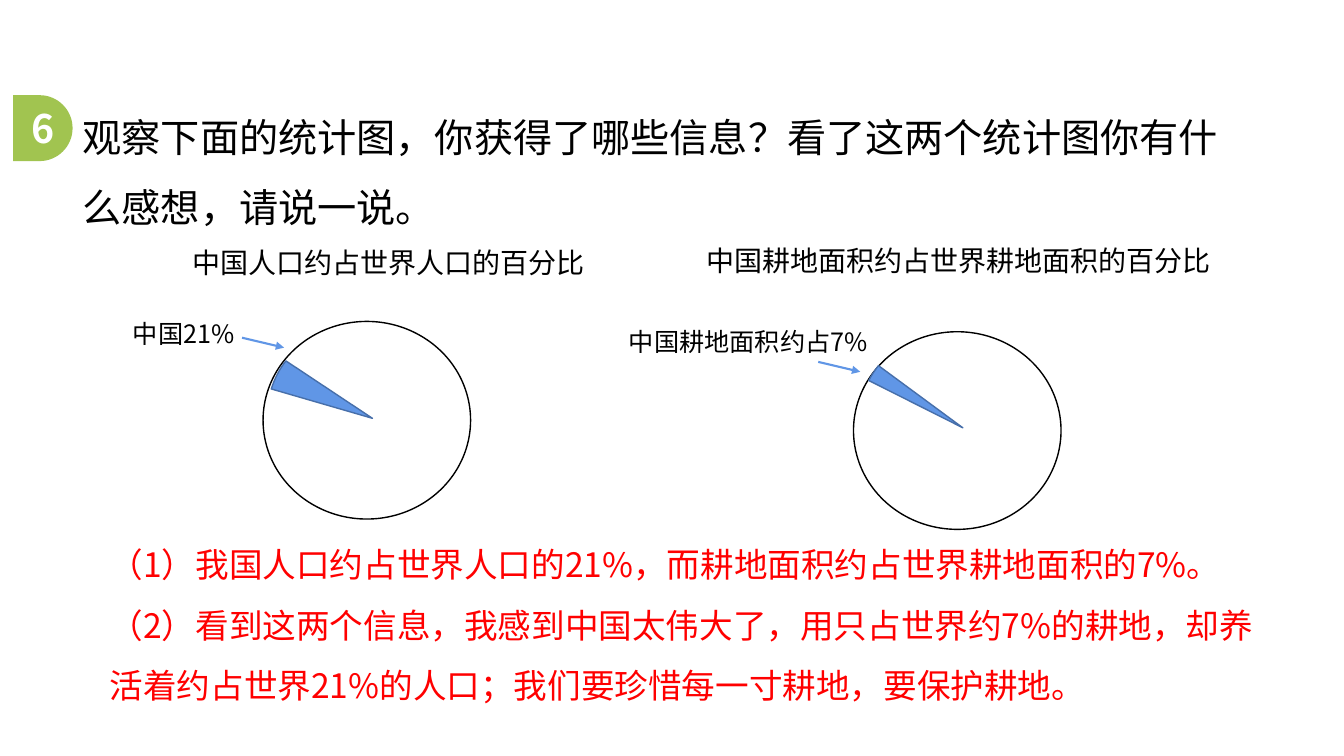
from math import cos, pi, sin

from lxml.etree import SubElement
from pptx import Presentation
from pptx.dml.color import RGBColor
from pptx.enum.shapes import MSO_CONNECTOR, MSO_SHAPE
from pptx.enum.text import MSO_ANCHOR, MSO_AUTO_SIZE, PP_ALIGN
from pptx.oxml.ns import qn
from pptx.util import Cm, Pt

FONT = "Noto Sans CJK SC"
BLACK = RGBColor(0x00, 0x00, 0x00)
WHITE = RGBColor(0xFF, 0xFF, 0xFF)
RED = RGBColor(0xFF, 0x00, 0x00)
GREEN = RGBColor(0xA1, 0xC4, 0x50)
BLUE = RGBColor(0x60, 0x96, 0xE6)
NAVY = RGBColor(0x47, 0x6F, 0xAA)


def place(shape, left, top, width, height):
    shape.left, shape.top = Cm(left), Cm(top)
    shape.width, shape.height = Cm(width), Cm(height)


def write(shape, text, size, color=BLACK, bold=False, wrap=True,
          align=PP_ALIGN.LEFT, anchor=MSO_ANCHOR.TOP, space=1.0):
    frame = shape.text_frame
    frame.text = text
    frame.word_wrap = wrap
    frame.auto_size = MSO_AUTO_SIZE.NONE
    frame.vertical_anchor = anchor
    for para in frame.paragraphs:
        para.alignment = align
        para.line_spacing = space
        para.space_before = Pt(0)
        for run in para.runs:
            font = run.font
            font.name, font.size, font.bold = FONT, Pt(size), bold
            font.color.rgb = color
            east = SubElement(font._element, qn("a:ea"))
            east.set("typeface", FONT)


def add_label(slide, text, size, box, wrap=True):
    label = slide.shapes.add_textbox(*map(Cm, box))
    write(label, text, size, wrap=wrap)


def paint(shape, fill, line=None):
    shape.shadow.inherit = False
    shape.fill.solid()
    shape.fill.fore_color.rgb = fill
    if line is None:
        shape.line.fill.background()
    else:
        shape.line.color.rgb = line
        shape.line.width = Pt(1)


def add_badge(slide, text, left, top, width, height):
    # Square on the left, half circle on the right
    half = height / 2
    mid = left + width - half
    turns = [pi * (step / 32 - 0.5) for step in range(33)]
    arc = [(Cm(mid + half * cos(turn)), Cm(top + half + half * sin(turn)))
           for turn in turns]
    path = slide.shapes.build_freeform(Cm(left), Cm(top))
    path.add_line_segments(arc + [(Cm(left), Cm(top + height))], close=True)
    badge = path.convert_to_shape()
    paint(badge, GREEN)
    write(badge, text, 28, WHITE, bold=True, align=PP_ALIGN.CENTER,
          anchor=MSO_ANCHOR.MIDDLE)


def add_pie(slide, left, top, drop, turn, start, end):
    disc = slide.shapes.add_shape(
        MSO_SHAPE.OVAL, Cm(left), Cm(top), Cm(5.23), Cm(4.98))
    paint(disc, WHITE, BLACK)
    slice_ = slide.shapes.add_shape(
        MSO_SHAPE.PIE, Cm(left + 0.1), Cm(top + drop), Cm(5.31), Cm(4.78))
    # Angles are stored in 60000ths of a degree, scaled by 100000
    slice_.adjustments[0] = start * 0.6
    slice_.adjustments[1] = end * 0.6
    slice_.rotation = turn
    paint(slice_, BLUE, NAVY)


def add_arrow(slide, left, top):
    arrow = slide.shapes.add_connector(
        MSO_CONNECTOR.STRAIGHT, Cm(left), Cm(top),
        Cm(left + 1.06), Cm(top + 0.25))
    arrow.line.color.rgb = BLUE
    arrow.line.width = Pt(1.5)
    SubElement(arrow.line._get_or_add_ln(), qn("a:tailEnd")).set(
        "type", "triangle")
    SubElement(arrow._element.spPr, qn("a:effectLst"))


def main():
    deck = Presentation()
    deck.slide_width, deck.slide_height = Cm(33.87), Cm(19.05)
    slide = deck.slides.add_slide(deck.slide_layouts[1])

    # Question
    add_badge(slide, "6", 0.33, 2.4, 1.5, 1.66)
    title = slide.shapes.title
    place(title, 1.83, 2.13, 29.36, 3.84)
    write(title, "观察下面的统计图，你获得了哪些信息？"
          "看了这两个统计图你有什么感想，请说一说。", 28, space=1.5)

    # Answers
    body = slide.placeholders[1]
    place(body, 2.51, 13.08, 29.85, 4.88)
    write(body, "（1）我国人口约占世界人口的21%，而耕地面积约占世界耕地面积的7%。"
          "（2）看到这两个信息，我感到中国太伟大了，用只占世界约7%的耕地，"
          "却养活着约占世界21%的人口；我们要珍惜每一寸耕地，要保护耕地。",
          24, RED, space=1.5)
    props = body.text_frame.paragraphs[0]._p.get_or_add_pPr()
    props.set("marL", "0")
    props.set("indent", "0")
    SubElement(props, qn("a:buNone"))

    # Population chart
    add_label(slide, "中国人口约占世界人口的百分比", 20,
              (4.6, 6.05, 10.49, 1.12), wrap=False)
    add_pie(slide, 6.63, 8.1, 0.05, 193.5, 2.717, 20.093)
    add_label(slide, "中国21%", 18, (3.1, 7.9, 4.27, 1.02))
    add_arrow(slide, 6.1, 8.51)

    # Farmland chart
    add_label(slide, "中国耕地面积约占世界耕地面积的百分比", 20,
              (17.55, 6.02, 13.34, 1.12), wrap=False)
    add_pie(slide, 21.51, 8.36, 0.03, 204, 2.717, 12.396)
    add_label(slide, "中国耕地面积约占7%", 18, (15.6, 8.1, 9.09, 1.02))
    add_arrow(slide, 20.62, 9.12)

    deck.save("out.pptx")


if __name__ == "__main__":
    main()
